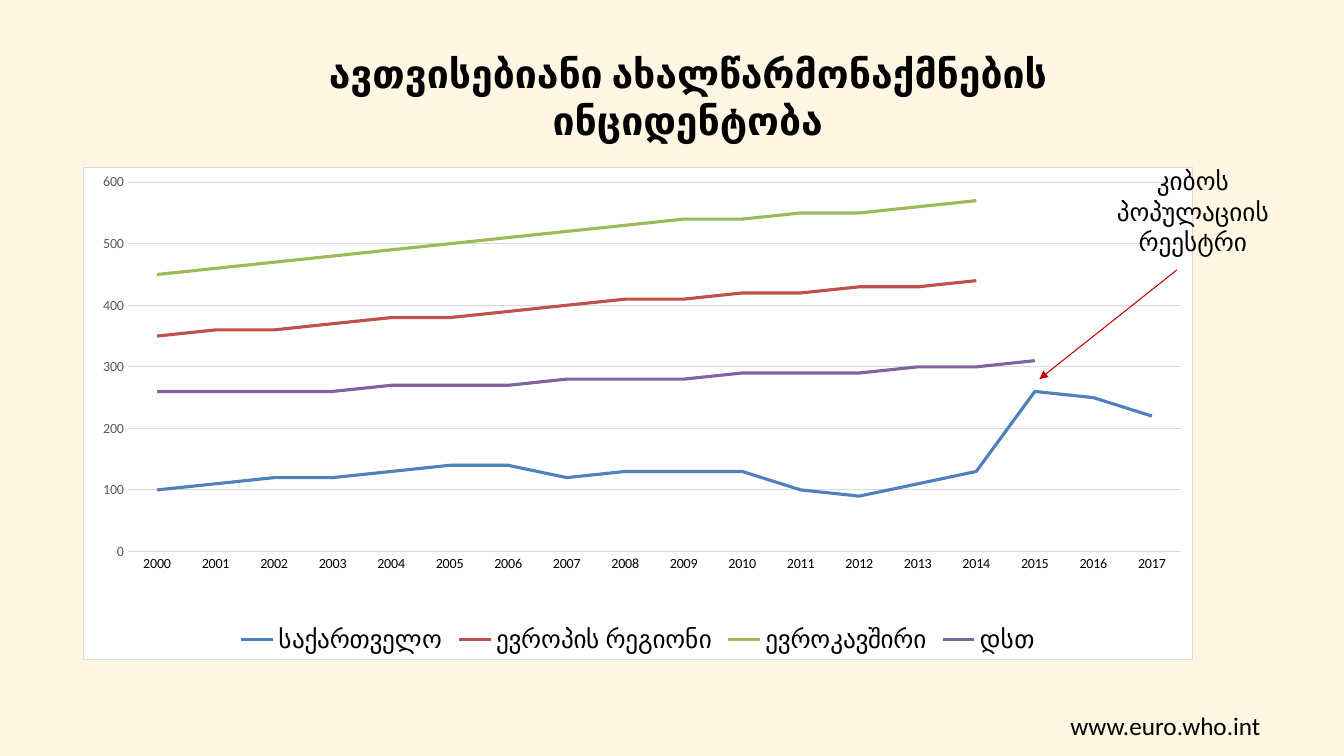
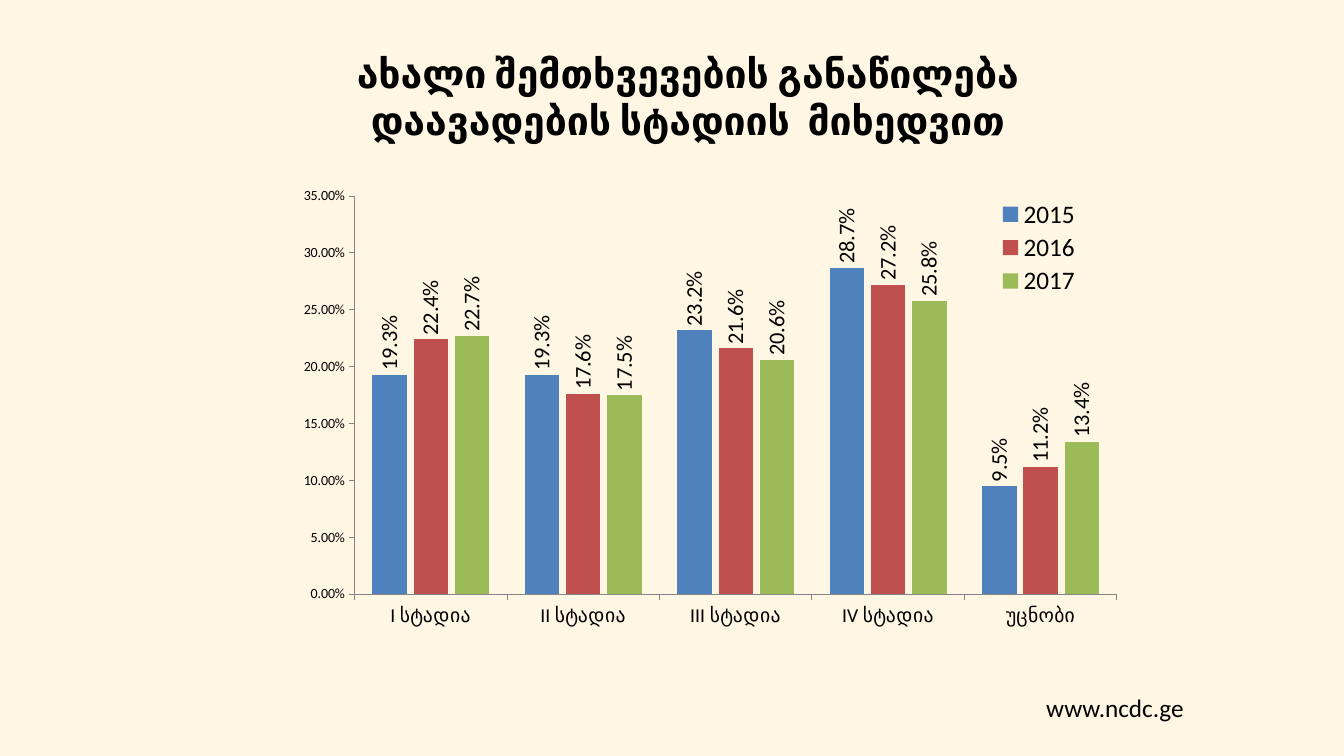
import pptx
import pptx.chart.data
import pptx.dml.color
import pptx.enum.chart
import pptx.enum.shapes
import pptx.enum.text
import pptx.oxml
import pptx.oxml.ns
import pptx.util
from dataclasses import dataclass

PX = 9525  # EMU in one px, 96 px to the inch
qn = pptx.oxml.ns.qn
NS = pptx.oxml.ns.nsdecls("c", "a")
XL = pptx.enum.chart
Align = pptx.enum.text.PP_ALIGN
Anchor = pptx.enum.text.MSO_ANCHOR


@dataclass(frozen=True)
class Theme:
    font: str = "Calibri"
    back: str = "FFF6E3"
    ink: str = "000000"
    paper: str = "FFFFFF"
    grid: str = "D9D9D9"
    grey: str = "595959"
    axis: str = "868686"
    arrow: str = "C00000"
    tints: tuple = ("4F81BD", "C0504D", "9BBB59", "8064A2")
    head: int = 28
    body: int = 18
    label: int = 16
    stage: int = 14
    tick: int = 10
    thin: float = 0.75
    thick: float = 2.25


T = Theme()
TITLE = (247, 20, 816, 121)


def px(*nums):
    return [pptx.util.Emu(n * PX) for n in nums]


def rgb(code):
    return pptx.dml.color.RGBColor.from_string(code)


def style(font, size, color=T.ink, bold=False):
    font.name, font.size, font.bold = T.font, pptx.util.Pt(size), bold
    font.color.rgb = rgb(color)


def stroke(line, color, width=T.thin):
    line.color.rgb = rgb(color)
    line.width = pptx.util.Pt(width)


def text(slide, box, lines, size=T.body, bold=False, align=Align.LEFT,
         anchor=Anchor.TOP, wrap=True):
    frame = slide.shapes.add_textbox(*px(*box)).text_frame
    frame.word_wrap, frame.vertical_anchor = wrap, anchor
    para = frame.paragraphs[0]
    para.alignment = align
    for i, line in enumerate(lines):
        if i:
            para.add_line_break()
        run = para.add_run()
        run.text = line
        style(run.font, size, bold=bold)


def base(deck, title, site, box):
    """Add a slide with the shared ground, title and web address."""
    slide = deck.slides.add_slide(deck.slide_layouts[6])
    slide.background.fill.solid()
    slide.background.fill.fore_color.rgb = rgb(T.back)
    text(slide, TITLE, title, T.head, True, Align.CENTER, Anchor.BOTTOM)
    text(slide, box, [site], wrap=False)
    return slide


def layout(parent, spot, index, inner=False):
    """Fix a plot or legend at fractions of the chart box."""
    for old in parent.findall(qn("c:layout")):
        parent.remove(old)
    target = '<c:layoutTarget val="inner"/>' if inner else ""
    modes = "".join(f'<c:{k}Mode val="edge"/>' for k in "xy")
    sizes = "".join(f'<c:{k} val="{v}"/>' for k, v in zip("xywh", spot))
    parent.insert(index, pptx.oxml.parse_xml(
        f"<c:layout {NS}><c:manualLayout>{target}{modes}{sizes}"
        "</c:manualLayout></c:layout>"))


def chart(slide, kind, box, cats, rows, plot, place):
    data = pptx.chart.data.CategoryChartData()
    data.categories = cats
    for name, vals in rows:
        data.add_series(name, vals)
    made = slide.shapes.add_chart(kind, *px(*box), data).chart
    made.has_title = False
    style(made.font, T.tick)
    made.has_legend = True
    made.legend.position = place
    made.legend.include_in_layout = False
    style(made.legend.font, T.body)
    layout(made._chartSpace.find(".//" + qn("c:plotArea")), plot, 0, True)
    return made


def axis(item, size, color, line, tick, grid=False):
    item.has_major_gridlines = grid
    item.major_tick_mark = tick
    item.minor_tick_mark = XL.XL_TICK_MARK.NONE
    style(item.tick_labels.font, size, color)
    if line:
        stroke(item.format.line, line)
    else:
        item.format.line.fill.background()
    if grid:
        stroke(item.major_gridlines.format.line, T.grid)


def scale(item, top, step):
    item.minimum_scale, item.maximum_scale, item.major_unit = 0, top, step


def panel(made):
    """Give the chart a filled ground and a thin border."""
    made._chartSpace.find(qn("c:chart")).addnext(pptx.oxml.parse_xml(
        f'<c:spPr {NS}><a:solidFill><a:srgbClr val="{T.paper}"/></a:solidFill>'
        f'<a:ln w="{int(T.thin * 12700)}"><a:solidFill>'
        f'<a:srgbClr val="{T.grid}"/></a:solidFill></a:ln></c:spPr>'))


def trend(slide, box):
    rows = [
        ("საქართველო", [100, 110, 120, 120, 130, 140, 140, 120, 130, 130, 130,
                        100, 90, 110, 130, 260, 250, 220]),
        ("ევროპის რეგიონი", [350, 360, 360, 370, 380, 380, 390, 400, 410, 410,
                             420, 420, 430, 430, 440] + [None] * 3),
        ("ევროკავშირი", [450, 460, 470, 480, 490, 500, 510, 520, 530, 540,
                         540, 550, 550, 560, 570] + [None] * 3),
        ("დსთ", [260, 260, 260, 260, 270, 270, 270, 280, 280, 280, 290, 290,
                 290, 300, 300, 310] + [None] * 2),
    ]
    years = [str(y) for y in range(2000, 2018)]
    made = chart(slide, XL.XL_CHART_TYPE.LINE, box, years, rows,
                 (0.04, 0.03, 0.95, 0.75), XL.XL_LEGEND_POSITION.BOTTOM)
    panel(made)
    none = XL.XL_TICK_MARK.NONE
    axis(made.category_axis, T.tick, T.ink, T.grid, none)
    axis(made.value_axis, T.tick, T.grey, None, none, True)
    scale(made.value_axis, 600, 100)
    made.plots[0].vary_by_categories = False
    for row, tint in zip(made.plots[0].series, T.tints):
        row.smooth = False
        row.marker.style = XL.XL_MARKER_STYLE.NONE
        stroke(row.format.line, tint, T.thick)


def note(slide, box):
    """Place the remark and its arrow, which starts below the box."""
    x, y, w, h = box
    link = slide.shapes.add_connector(
        pptx.enum.shapes.MSO_CONNECTOR.STRAIGHT,
        *px(x + 86, y + h + 7, x - 45, y + h + 111))
    stroke(link.line, T.arrow)
    link.line._get_or_add_ln().append(
        pptx.oxml.parse_xml(f'<a:tailEnd {NS} type="triangle"/>'))
    link._element.spPr.append(pptx.oxml.parse_xml(f"<a:effectLst {NS}/>"))
    text(slide, box, ["კიბოს პოპულაციის რეესტრი"], align=Align.CENTER)


def stages(slide, box):
    cats = [f"{n} სტადია" for n in ("I", "II", "III", "IV")] + ["უცნობი"]
    rows = [
        ("2015", [0.193, 0.193, 0.232, 0.287, 0.095]),
        ("2016", [0.224, 0.176, 0.216, 0.272, 0.112]),
        ("2017", [0.227, 0.175, 0.206, 0.258, 0.134]),
    ]
    made = chart(slide, XL.XL_CHART_TYPE.COLUMN_CLUSTERED, box, cats, rows,
                 (0.11, 0.04, 0.88, 0.85), XL.XL_LEGEND_POSITION.RIGHT)
    layout(made.legend._element, (0.84, 0.04, 0.12, 0.22), 1)
    out = XL.XL_TICK_MARK.OUTSIDE
    axis(made.category_axis, T.stage, T.ink, T.axis, out)
    axis(made.value_axis, T.tick, T.ink, T.axis, out)
    scale(made.value_axis, 0.35, 0.05)
    ticks = made.value_axis.tick_labels
    ticks.number_format, ticks.number_format_is_linked = "0.00%", False
    plot = made.plots[0]
    plot.vary_by_categories = False
    plot.gap_width, plot.overlap = 104, -20
    for row, tint in zip(plot.series, T.tints):
        row.format.fill.solid()
        row.format.fill.fore_color.rgb = rgb(tint)
        marks = row.data_labels
        marks.show_value = True
        marks.number_format, marks.number_format_is_linked = "0.0%", False
        marks.position = XL.XL_LABEL_POSITION.OUTSIDE_END
        style(marks.font, T.label)
        turn = marks._element.find(".//" + qn("a:bodyPr"))
        turn.set("rot", "-5400000")
        turn.set("vert", "horz")


def main():
    deck = pptx.Presentation()
    deck.slide_width, deck.slide_height = px(1280, 720)

    slide = base(deck, ["ავთვისებიანი ახალწარმონაქმნების", "ინციდენტობა"],
                 "www.euro.who.int", (1010, 672, 203, 38))
    trend(slide, (79, 159, 1057, 470))
    note(slide, (1035, 153, 202, 97))

    slide = base(deck, ["ახალი შემთხვევების განაწილება",
                        "დაავადების სტადიის  მიხედვით"],
                 "www.ncdc.ge", (987, 655, 152, 38))
    stages(slide, (247, 169, 825, 446))

    deck.save("out.pptx")


if __name__ == "__main__":
    main()
